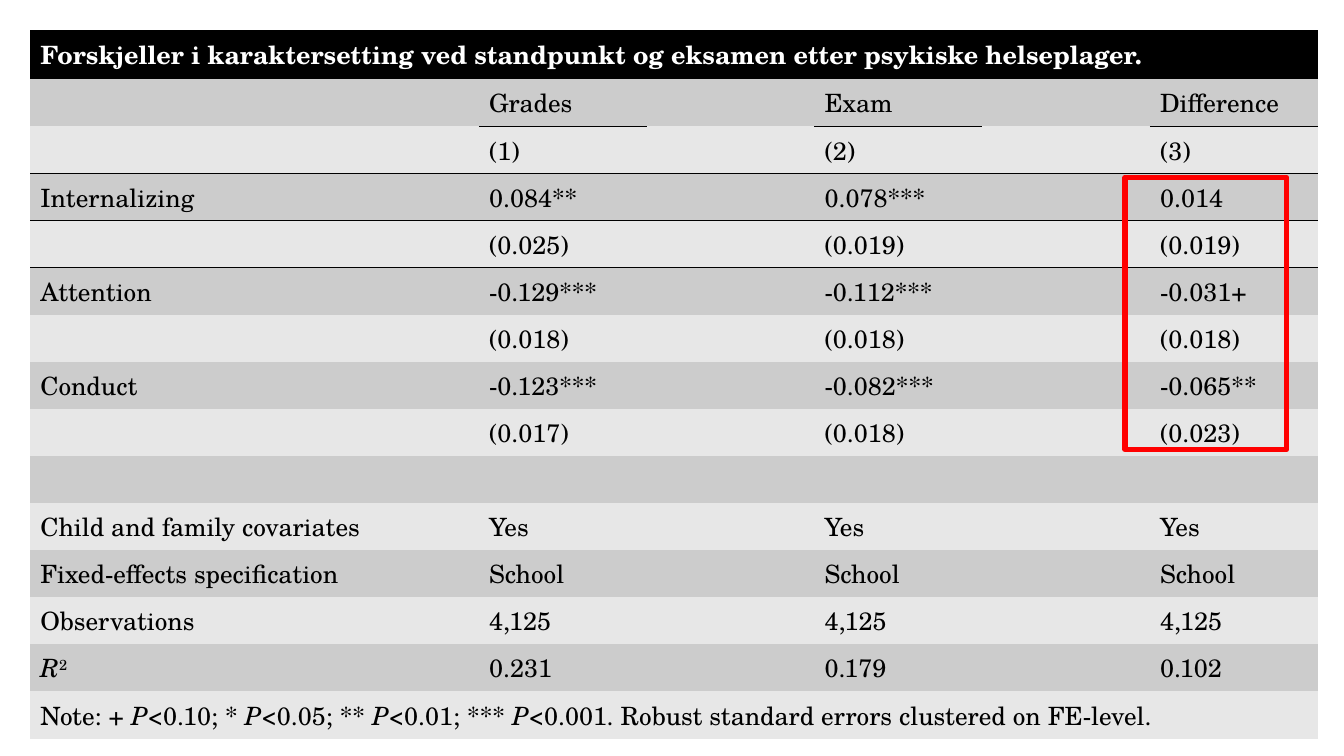
from dataclasses import dataclass

from lxml import etree
from pptx import Presentation
from pptx.dml.color import RGBColor
from pptx.enum.shapes import MSO_SHAPE
from pptx.oxml.ns import qn
from pptx.util import Inches, Pt

RECTANGLE = MSO_SHAPE.RECTANGLE
FONT = "TeX Gyre Schola"
PLAIN_TABLE_STYLE = "{2D5ABB26-0587-4C30-8999-92F81FD0307C}"
COLORS = {
    "title_band": "000000",
    "title_text": "FFFFFF",
    "dark_band": "CCCCCC",
    "light_band": "E7E7E7",
    "ink": "000000",
    "highlight": "FF0000",
}
TABLE_LEFT, TABLE_TOP, TABLE_WIDTH, TABLE_HEIGHT = 0.3, 0.3, 12.77, 6.97
LABEL_WIDTH = 4.45
COLUMN_COUNT = 6
MODEL_COLUMNS = (1, 3, 5)
ALL_COLUMNS = tuple(range(COLUMN_COUNT))


@dataclass(frozen=True)
class Part:
    text: str
    italic: bool = False
    superscript: bool = False


@dataclass(frozen=True)
class Row:
    label: tuple[Part, ...] = ()
    values: tuple[str, ...] = ()
    ruled_columns: tuple[int, ...] = ()
    spans: bool = False


def labelled(label: str, *values: str, ruled: tuple[int, ...] = ()) -> Row:
    return Row((Part(label),) if label else (), values, ruled)


P = Part("P", italic=True)
TITLE = Row(
    (Part("Forskjeller i karaktersetting ved standpunkt og eksamen etter psykiske helseplager."),),
    spans=True,
)
NOTE = Row(
    (
        Part("Note: + "), P, Part("<0.10; * "), P, Part("<0.05; ** "), P,
        Part("<0.01; *** "), P,
        Part("<0.001. Robust standard errors clustered on FE-level."),
    ),
    spans=True,
)
ROWS = [
    TITLE,
    labelled("", "Grades", "Exam", "Difference", ruled=MODEL_COLUMNS),
    labelled("", "(1)", "(2)", "(3)", ruled=ALL_COLUMNS),
    labelled("Internalizing", "0.084**", "0.078***", "0.014", ruled=ALL_COLUMNS),
    labelled("", "(0.025)", "(0.019)", "(0.019)"),
    labelled("Attention", "-0.129***", "-0.112***", "-0.031+"),
    labelled("", "(0.018)", "(0.018)", "(0.018)"),
    labelled("Conduct", "-0.123***", "-0.082***", "-0.065**"),
    labelled("", "(0.017)", "(0.018)", "(0.023)"),
    Row(),
    labelled("Child and family covariates", "Yes", "Yes", "Yes"),
    labelled("Fixed-effects specification", "School", "School", "School"),
    labelled("Observations", "4,125", "4,125", "4,125"),
    Row((Part("R", italic=True), Part("2", superscript=True)), ("0.231", "0.179", "0.102")),
    NOTE,
]


def add_text(paragraph, text: str, *, color: str = "ink", size: float = 18,
             bold: bool = False, italic: bool = False, superscript: bool = False) -> None:
    run = paragraph.add_run()
    run.text = text
    run.font.name = FONT
    run.font.size = Pt(size)
    run.font.bold = bold
    run.font.italic = italic
    run.font.color.rgb = RGBColor.from_string(COLORS[color])
    if superscript:
        run._r.get_or_add_rPr().set("baseline", "30000")


def add_rule(cell, edge: str) -> None:
    rule = etree.Element(qn(f"a:{edge}"), w=str(Pt(1)))
    fill = etree.SubElement(rule, qn("a:solidFill"))
    etree.SubElement(fill, qn("a:srgbClr"), val=COLORS["ink"])
    cell._tc.get_or_add_tcPr().insert(0, rule)


def fill_row(table, index: int, row: Row) -> None:
    is_title = row is TITLE
    band = "title_band" if is_title else "dark_band" if index % 2 else "light_band"
    for column in ALL_COLUMNS:
        cell = table.cell(index, column)
        cell.fill.solid()
        cell.fill.fore_color.rgb = RGBColor.from_string(COLORS[band])
        if column in row.ruled_columns:
            add_rule(cell, "lnB")
        if index and column in ROWS[index - 1].ruled_columns:
            add_rule(cell, "lnT")
    if row.spans:
        table.cell(index, 0).merge(table.cell(index, COLUMN_COUNT - 1))
    label = table.cell(index, 0).text_frame.paragraphs[0]
    for part in row.label:
        add_text(label, part.text, color="title_text" if is_title else "ink",
                 bold=is_title, italic=part.italic, superscript=part.superscript)
    for column, value in zip(MODEL_COLUMNS, row.values):
        add_text(table.cell(index, column).text_frame.paragraphs[0], value)


def add_results(slide) -> None:
    frame = slide.shapes.add_table(
        len(ROWS), COLUMN_COUNT, Inches(TABLE_LEFT), Inches(TABLE_TOP),
        Inches(TABLE_WIDTH), Inches(TABLE_HEIGHT),
    )
    table = frame.table
    table.first_row = False
    table.horz_banding = False
    for style in frame.element.iter(qn("a:tableStyleId")):
        style.text = PLAIN_TABLE_STYLE
    value_width = (TABLE_WIDTH - LABEL_WIDTH) / (COLUMN_COUNT - 1)
    for column in ALL_COLUMNS:
        table.columns[column].width = Inches(value_width if column else LABEL_WIDTH)
    for index, row in enumerate(ROWS):
        fill_row(table, index, row)


def add_difference_highlight(slide) -> None:
    highlight = slide.shapes.add_shape(
        RECTANGLE, Inches(11.16), Inches(1.76), Inches(1.6), Inches(2.7)
    )
    highlight.shadow.inherit = False
    highlight.fill.background()
    highlight.line.color.rgb = RGBColor.from_string(COLORS["highlight"])
    highlight.line.width = Pt(4)


def main() -> None:
    presentation = Presentation()
    presentation.slide_width = Inches(13.33)
    presentation.slide_height = Inches(7.5)
    slide = presentation.slides.add_slide(presentation.slide_layouts[6])
    add_results(slide)
    add_difference_highlight(slide)
    presentation.save("out.pptx")


if __name__ == "__main__":
    main()
